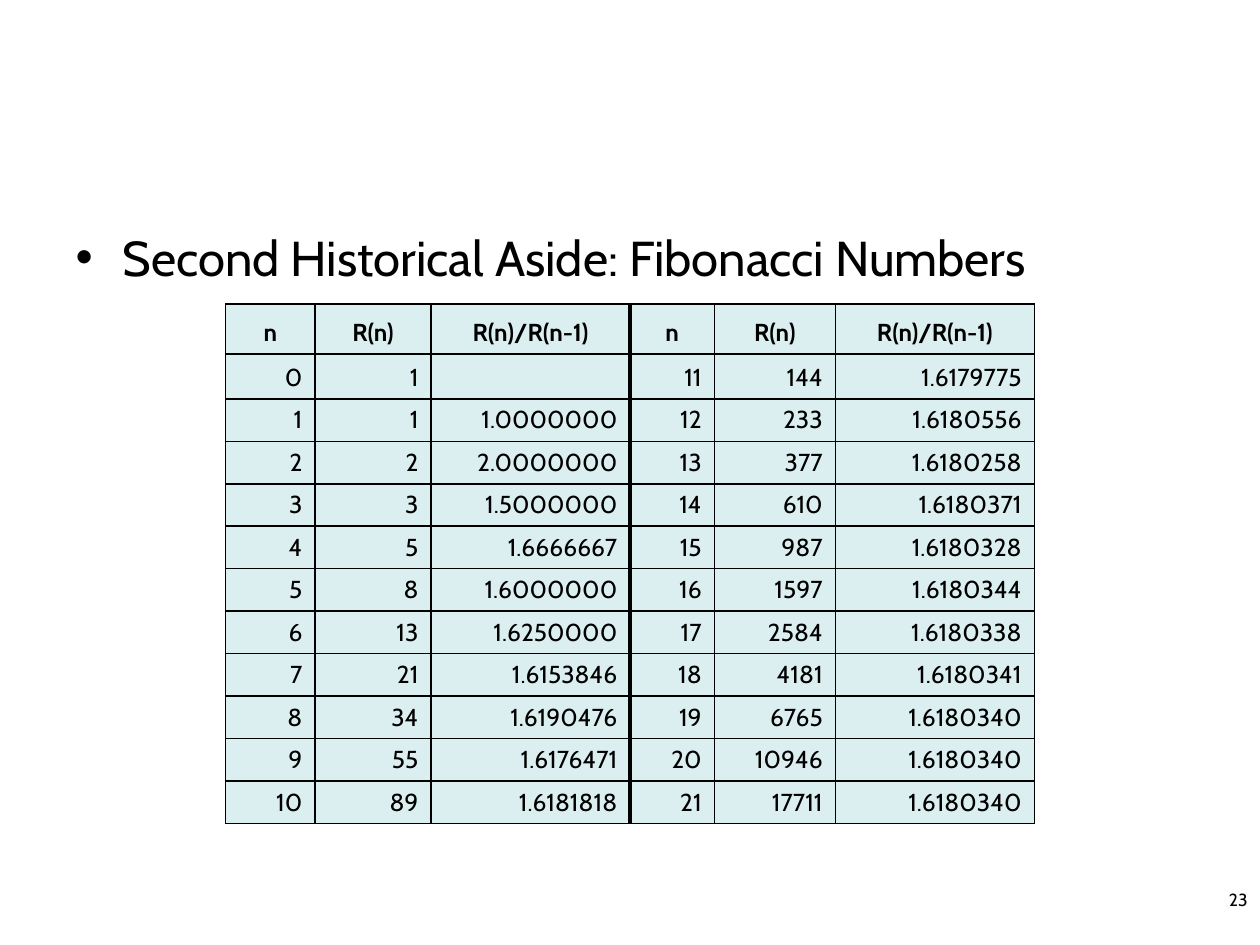
import pptx
import pptx.util
import pptx.dml.color
import pptx.enum.text
import pptx.oxml.ns
import lxml.etree

Cm, Pt = pptx.util.Cm, pptx.util.Pt
Align, Anchor = pptx.enum.text.PP_ALIGN, pptx.enum.text.MSO_ANCHOR
qn = pptx.oxml.ns.qn
tint = {"ink": "000000", "cell": "BBE0E3"}
hang = Cm(0.95)


def write(frame, text, size=14, bold=False, align=Align.LEFT, indent=0, bullet=None):
    para = frame.paragraphs[0]
    props = para._p.get_or_add_pPr()
    props.set("marL", str(int(indent)))
    props.set("indent", str(-int(indent)))
    if bullet:
        lxml.etree.SubElement(props, qn("a:buChar"), char=bullet)
    para.alignment = align
    para.space_before = Pt(0)
    if text:
        run = para.add_run()
        run.text = text
        run.font.name = "Cabin"
        run.font.size = Pt(size)
        run.font.bold = bold
        run.font.color.rgb = pptx.dml.color.RGBColor.from_string(tint["ink"])
    else:
        lxml.etree.SubElement(para._p, qn("a:endParaRPr"), sz=str(size * 100))


def border(cell, widths):
    props = cell._tc.get_or_add_tcPr()
    for spot, (side, width) in enumerate(widths.items()):
        line = lxml.etree.Element(qn("a:ln" + side), w=str(Pt(width)))
        fill = lxml.etree.SubElement(line, qn("a:solidFill"))
        lxml.etree.SubElement(fill, qn("a:srgbClr"), val=tint["ink"])
        props.insert(spot, line)


deck = pptx.Presentation()
deck.slide_width, deck.slide_height = Cm(25.4), Cm(19.05)
slide = deck.slides.add_slide(deck.slide_layouts[1])
title = slide.shapes.title
title._element.getparent().remove(title._element)

body = slide.placeholders[1]
body.left, body.top, body.width, body.height = Cm(1.27), Cm(4.45), Cm(22.66), Cm(1.9)
body.text_frame.auto_size = pptx.enum.text.MSO_AUTO_SIZE.NONE
body.text_frame.vertical_anchor = Anchor.TOP
write(body.text_frame, "Second Historical Aside: Fibonacci Numbers",
      size=28, indent=hang, bullet="•")

fib = [1, 1]
while len(fib) < 22:
    fib.append(fib[-1] + fib[-2])
terms = [[str(n), str(fib[n]), f"{fib[n] / fib[n - 1]:.7f}" if n else ""]
         for n in range(22)]
head = ["n", "R(n)", "R(n)/R(n-1)"]
rows = [head * 2] + [terms[n] + terms[n + 11] for n in range(11)]

wide = [1.8, 2.34, 4.01, 1.7, 2.44, 4.01]
high = [1.01, 0.9] + [0.85] * 10
grid = slide.shapes.add_table(len(rows), len(wide), Cm(4.55), Cm(6.13),
                              Cm(sum(wide)), Cm(sum(high))).table
grid.first_row = grid.horz_banding = False
for col, width in zip(grid.columns, wide):
    col.width = Cm(width)
for r, row in enumerate(rows):
    grid.rows[r].height = Cm(high[r])
    for c, text in enumerate(row):
        cell = grid.cell(r, c)
        cell.vertical_anchor = Anchor.BOTTOM
        cell.fill.solid()
        cell.fill.fore_color.rgb = pptx.dml.color.RGBColor.from_string(tint["cell"])
        shade = cell._tc.tcPr.find(".//" + qn("a:srgbClr"))
        lxml.etree.SubElement(shade, qn("a:alpha"), val="50000")
        border(cell, {"L": 3 if c == 3 else 1, "R": 3 if c == 2 else 1, "T": 1, "B": 1})
        write(cell.text_frame, text, bold=r == 0, indent=hang,
              align=Align.RIGHT if r else Align.CENTER)

page = slide.shapes.add_textbox(Cm(23.93), Cm(17.78), Cm(1.47), Cm(0.69)).text_frame
page.word_wrap = True
page.vertical_anchor = Anchor.MIDDLE
write(page, "23", size=10, align=Align.RIGHT)

deck.save("out.pptx")
